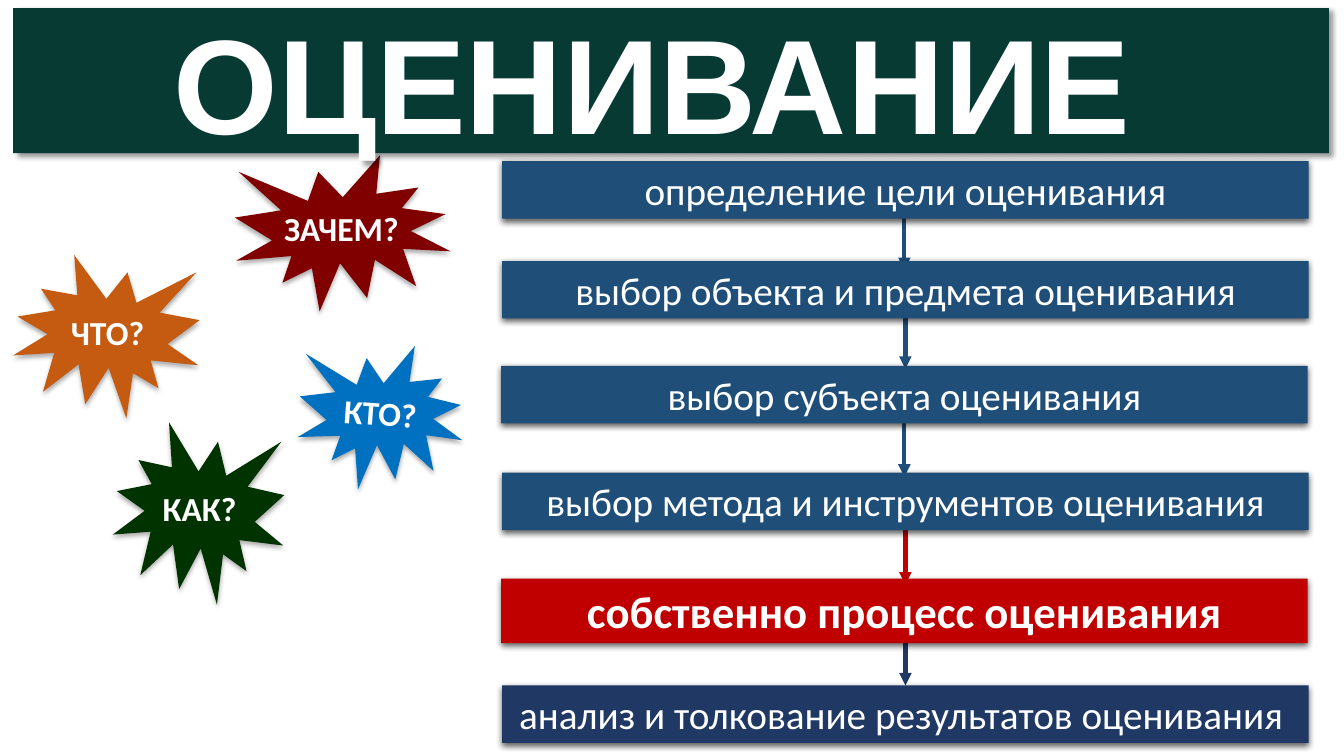
from dataclasses import dataclass

from lxml.etree import SubElement
from pptx import Presentation
from pptx.dml.color import RGBColor
from pptx.enum.shapes import MSO_CONNECTOR as Link, MSO_SHAPE as Preset
from pptx.enum.text import MSO_ANCHOR as Anchor, MSO_AUTO_SIZE as AutoSize, PP_ALIGN as Align
from pptx.oxml.ns import qn
from pptx.util import Inches, Pt

COLORS = {
    "white": "FFFFFF", "black": "000000", "banner": "083A34",
    "blue": "1F4E79", "navy": "203864", "red": "C00000",
    "maroon": "800000", "orange": "C55A11", "azure": "0070C0", "green": "003300",
}


@dataclass
class Shadow:
    opacity: int
    blur: float
    distance: float
    angle: int


@dataclass
class Step:
    text: str
    left: float
    top: float
    color: str = "blue"
    height: float = 0.57
    size: int = 28
    bold: bool = False


@dataclass
class Arrow:
    x: float
    top: float
    bottom: float
    color: str = "blue"


@dataclass
class Question:
    text: str
    left: float
    top: float
    width: float
    height: float
    color: str
    flipped: bool = False
    rotation: float = 0


STEP_WIDTH = 8
STEP_SHADOW = Shadow(63, 4.5, 1.5, 90)
QUESTION_SHADOW = Shadow(32, 3.5, 2.2, 90)
BANNER_SHADOW = Shadow(40, 4, 3, 45)

STEPS = [
    Step("определение цели оценивания", 4.98, 1.6),
    Step("выбор объекта и предмета оценивания", 4.98, 2.59),
    Step("выбор субъекта оценивания", 4.97, 3.63),
    Step("выбор метода и инструментов оценивания", 4.98, 4.69),
    Step("собственно процесс оценивания", 4.97, 5.74, "red", 0.64, 32, True),
    Step("анализ и толкование результатов оценивания ", 4.98, 6.8, "navy"),
]
ARROWS = [
    Arrow(8.97, 2.09, 2.68),
    Arrow(8.98, 3.07, 3.66),
    Arrow(8.97, 4.14, 4.73),
    Arrow(8.98, 5.21, 5.8, "red"),
    Arrow(8.98, 6.25, 6.8, "navy"),
]
QUESTIONS = [
    Question("КТО?", 2.96, 3.41, 1.64, 1.46, "azure", rotation=4.2),
    Question("КАК?", 1.12, 4.19, 1.7, 1.81, "green", flipped=True),
    Question("ЧТО?", 0.13, 2.53, 1.85, 1.62, "orange", flipped=True),
    Question("ЗАЧЕМ?", 2.33, 1.54, 2.14, 1.55, "maroon"),
]


def rgb(name: str) -> RGBColor:
    return RGBColor.from_string(COLORS[name])


def paint(shape, color: str, shadow: Shadow) -> None:
    shape.fill.solid()
    shape.fill.fore_color.rgb = rgb(color)
    shape.line.fill.background()
    shape.shadow.inherit = False
    effects = shape._element.spPr.find(qn("a:effectLst"))
    outer = SubElement(effects, qn("a:outerShdw"), blurRad=str(Pt(shadow.blur)),
                       dist=str(Pt(shadow.distance)), dir=str(shadow.angle * 60000),
                       algn="ctr", rotWithShape="0")
    tint = SubElement(outer, qn("a:srgbClr"), val=COLORS["black"])
    SubElement(tint, qn("a:alpha"), val=str(shadow.opacity * 1000))


def write(shape, text: str, size: int, bold: bool, font: str = "Calibri",
          anchor: Anchor = Anchor.MIDDLE, wrap: bool = True) -> None:
    frame = shape.text_frame
    frame.text = text
    frame.word_wrap = wrap
    frame.auto_size = AutoSize.NONE
    frame.vertical_anchor = anchor
    paragraph = frame.paragraphs[0]
    paragraph.alignment = Align.CENTER
    for run in paragraph.runs:
        run.font.name = font
        run.font.size = Pt(size)
        run.font.bold = bold
        run.font.color.rgb = rgb("white")


def draw_arrow(slide, arrow: Arrow):
    connector = slide.shapes.add_connector(
        Link.STRAIGHT, Inches(arrow.x), Inches(arrow.top), Inches(arrow.x), Inches(arrow.bottom))
    connector.line.color.rgb = rgb(arrow.color)
    connector.line.width = Pt(3)
    SubElement(connector.line._get_or_add_ln(), qn("a:tailEnd"), type="triangle")
    SubElement(connector._element.spPr, qn("a:effectLst"))
    return connector


def draw_question(slide, question: Question) -> None:
    burst = slide.shapes.add_shape(
        Preset.EXPLOSION1, Inches(question.left), Inches(question.top),
        Inches(question.width), Inches(question.height))
    burst.rotation = question.rotation
    if question.flipped:
        burst._element.spPr.find(qn("a:xfrm")).set("flipH", "1")
    paint(burst, question.color, QUESTION_SHADOW)
    write(burst, question.text, 24, True, wrap=False)


def draw_step(slide, step: Step):
    bar = slide.shapes.add_shape(Preset.RECTANGLE, Inches(step.left), Inches(step.top),
                                 Inches(STEP_WIDTH), Inches(step.height))
    paint(bar, step.color, STEP_SHADOW)
    write(bar, step.text, step.size, step.bold, anchor=Anchor.TOP)
    return bar


def draw_banner(slide) -> None:
    banner = slide.shapes.title
    banner.left, banner.top = Inches(0.13), Inches(0.08)
    banner.width, banner.height = Inches(13.05), Inches(1.44)
    paint(banner, "banner", BANNER_SHADOW)
    write(banner, "ОЦЕНИВАНИЕ ", 96, True, font="Arial")
    # The heading lies in front of the bursts
    slide.shapes._spTree.append(banner._element)


def main() -> None:
    deck = Presentation()
    deck.slide_width, deck.slide_height = Inches(13.33), Inches(7.5)
    slide = deck.slides.add_slide(deck.slide_layouts[5])

    # Arrows lie behind the steps
    connectors = [draw_arrow(slide, arrow) for arrow in ARROWS]

    # Questions on the left
    for question in QUESTIONS:
        draw_question(slide, question)

    # Steps on the right
    bars = [draw_step(slide, step) for step in STEPS]
    connectors[-1].end_connect(bars[-1], 0)

    # Heading
    draw_banner(slide)
    deck.save("out.pptx")


if __name__ == "__main__":
    main()
